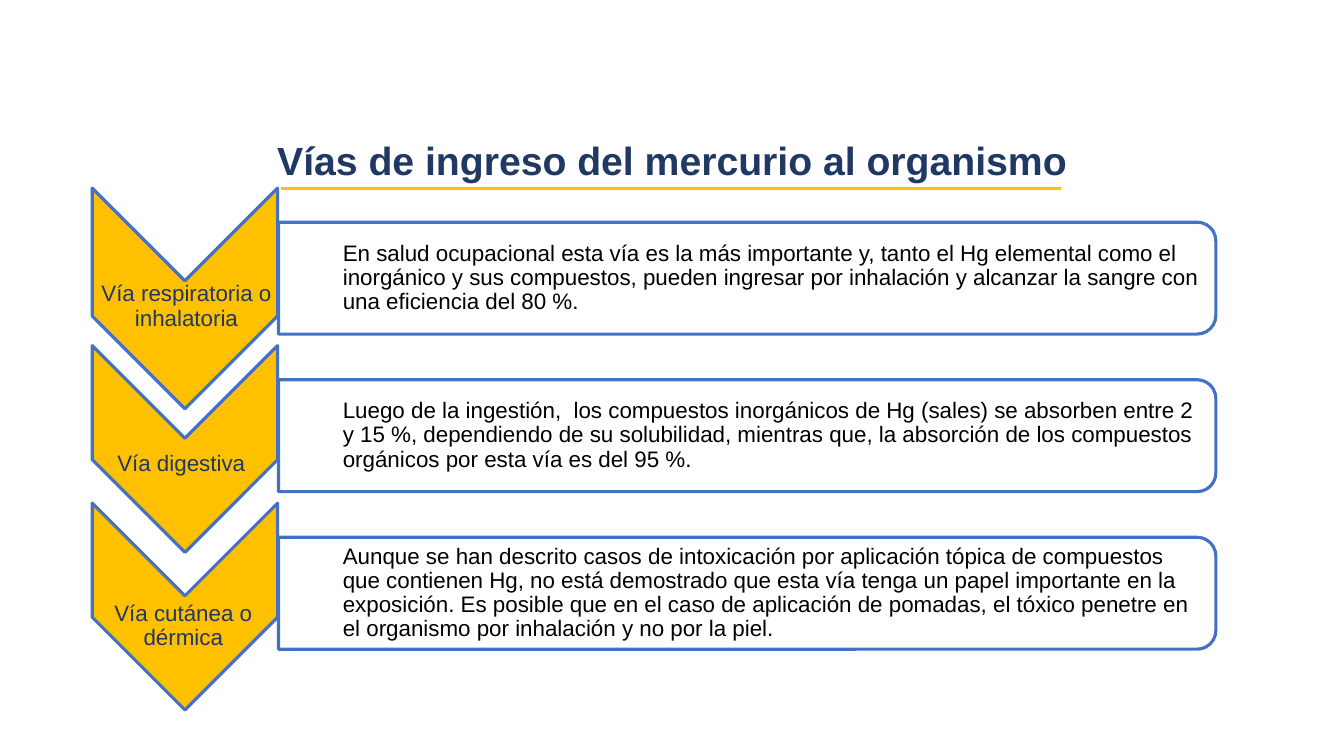
import pptx
import pptx.util
import pptx.dml.color
import pptx.enum.shapes
import pptx.enum.text
import pptx.oxml.ns
from lxml import etree

Cm, Pt = pptx.util.Cm, pptx.util.Pt
RGB = pptx.dml.color.RGBColor
KIND = pptx.enum.shapes.MSO_SHAPE
ALIGN = pptx.enum.text.PP_ALIGN
MIDDLE = pptx.enum.text.MSO_ANCHOR.MIDDLE
qn = pptx.oxml.ns.qn

# Content
TITLE = "Vías de ingreso del mercurio al organismo"
# Label, label centre (x, y), label height, chevron length, text; in cm
ROUTES = [
    ("Vía respiratoria o inhalatoria", (4.7, 7.73), 1.3, 5.56,
     "En salud ocupacional esta vía es la más importante y, tanto el Hg "
     "elemental como el inorgánico y sus compuestos, pueden ingresar por "
     "inhalación y alcanzar la sangre con una eficiencia del 80 %."),
    ("Vía digestiva", (4.57, 11.7), 1.7, 5.21,
     "Luego de la ingestión,  los compuestos inorgánicos de Hg (sales) se "
     "absorben entre 2 y 15 %, dependiendo de su solubilidad, mientras que, "
     "la absorción de los compuestos orgánicos por esta vía es del 95 %."),
    ("Vía cutánea o dérmica", (4.62, 15.79), 1.3, 5.21,
     "Aunque se han descrito casos de intoxicación por aplicación tópica de "
     "compuestos que contienen Hg, no está demostrado que esta vía tenga un "
     "papel importante en la exposición. Es posible que en el caso de "
     "aplicación de pomadas, el tóxico penetre en el organismo por "
     "inhalación y no por la piel."),
]

# Colours
NAVY = RGB(0x1F, 0x38, 0x64)
LABEL = RGB(0x20, 0x38, 0x64)
GOLD = RGB(0xFF, 0xC0, 0x00)
BLUE = RGB(0x43, 0x72, 0xC3)
WHITE = RGB(0xFF, 0xFF, 0xFF)
BLACK = RGB(0, 0, 0)

# Layout in cm
TOP, STEP = 4.74, 3.97
ARROW_X, ARROW_W = 4.66, 4.67
BAR_X, BAR_Y, BAR_L, BAR_H = 18.83, 7.01, 23.62, 2.82
TEXT_X, TEXT_W, TEXT_H = 18.72, 23.42, 2.57


def place(x, y, w, h):
    """Box of size w by h centred on x, y."""
    return Cm(x - w / 2), Cm(y - h / 2), Cm(w), Cm(h)


def style(par, size, color, align, bold=False):
    par.alignment = align
    par.line_spacing = 0.9
    par.font.name = "Arial"
    par.font.size = Pt(size)
    par.font.bold = bold
    par.font.color.rgb = color


def turned(kind, x, y, w, h, fill):
    """Outlined shape turned a quarter; w and h are before the turn."""
    shape = slide.shapes.add_shape(kind, *place(x, y, w, h))
    shape.rotation = 90
    shape.shadow.inherit = False
    shape.fill.solid()
    shape.fill.fore_color.rgb = fill
    shape.line.color.rgb = BLUE
    shape.line.width = Pt(2.25)
    return shape


def write(text, x, y, w, h, color, align, left=0.03):
    frame = slide.shapes.add_textbox(*place(x, y, w, h)).text_frame
    frame.word_wrap = True
    frame.vertical_anchor = MIDDLE
    frame.margin_left = Cm(left)
    frame.margin_right = frame.margin_top = frame.margin_bottom = Cm(0.03)
    par = frame.paragraphs[0]
    par.text = text
    style(par, 16, color, align)
    return par


deck = pptx.Presentation()
deck.slide_width, deck.slide_height = Cm(33.87), Cm(19.05)
slide = deck.slides.add_slide(deck.slide_layouts[5])

# Title and its rule
title = slide.shapes.title
title.left, title.top, title.width, title.height = (
    Cm(2.33), Cm(2.18), Cm(29.21), Cm(3.84))
title.text_frame.text = TITLE
title.text_frame.vertical_anchor = MIDDLE
style(title.text_frame.paragraphs[0], 28, NAVY, ALIGN.CENTER, True)

rule = slide.shapes.add_connector(
    pptx.enum.shapes.MSO_CONNECTOR.STRAIGHT,
    Cm(7.09), Cm(4.75), Cm(26.75), Cm(4.75))
rule.line.color.rgb = GOLD
rule.line.width = Pt(2.25)
etree.SubElement(rule._element.spPr, qn("a:effectLst"))

# One row for each route: chevron, label, bar, text
for row, (label, (x, y), high, size, text) in enumerate(ROUTES):
    drop = row * STEP
    turned(KIND.CHEVRON, ARROW_X, TOP + drop + size / 2, size, ARROW_W, GOLD)
    write(label, x, y, ARROW_W, high, LABEL, ALIGN.CENTER)

    mid = BAR_Y + drop
    bar = turned(KIND.ROUND_2_SAME_RECTANGLE, BAR_X, mid, BAR_H, BAR_L, WHITE)
    tint = bar._element.spPr.find(qn("a:solidFill"))[0]
    etree.SubElement(tint, qn("a:alpha")).set("val", "90000")

    par = write(text, TEXT_X, mid, TEXT_W, TEXT_H, BLACK, ALIGN.LEFT, 0.36)
    par.level = 1
    props = par._p.get_or_add_pPr()
    props.set("marL", str(Cm(1.27)))
    props.set("indent", "0")

deck.save("out.pptx")
